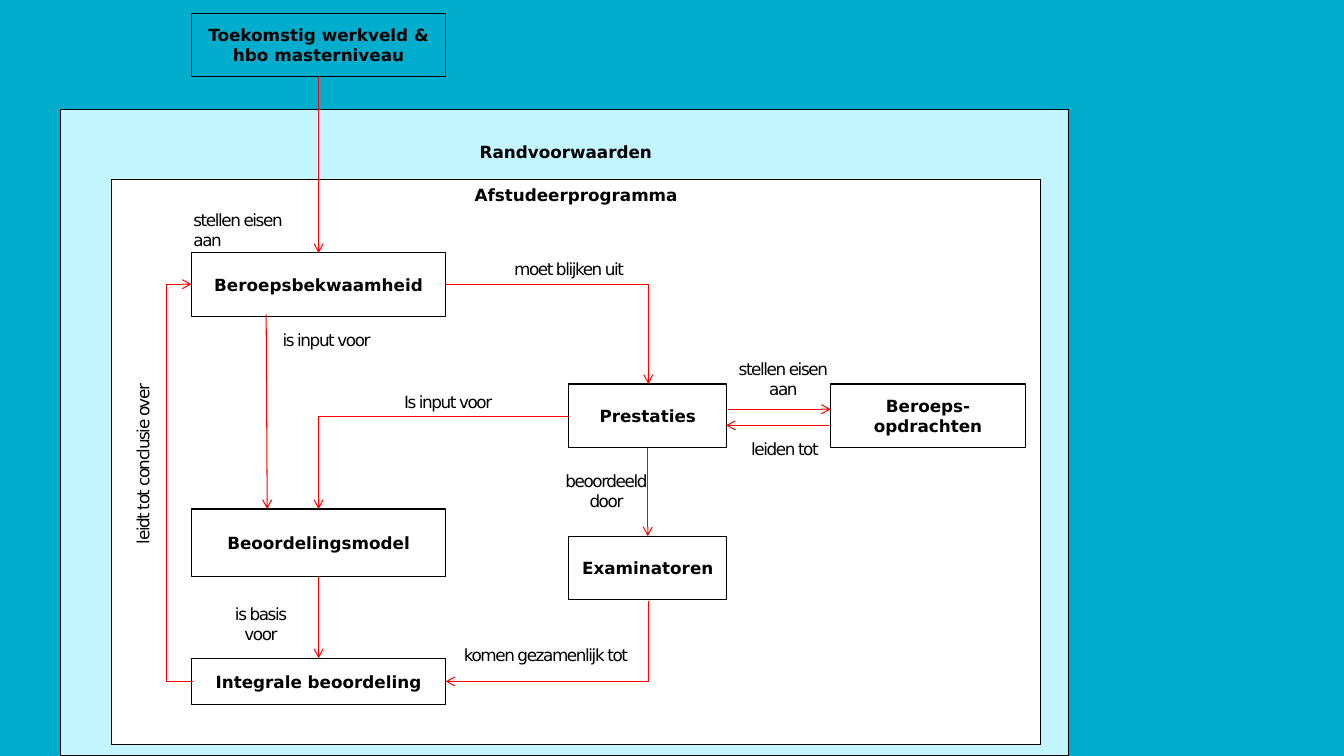
from dataclasses import dataclass

from lxml import etree
from pptx import Presentation
from pptx import util as u
from pptx.dml.color import RGBColor
from pptx.enum import shapes, text
from pptx.oxml.ns import qn

COLOURS = {"page": "00ADCD", "frame": "C2F5FF", "programme": "FFFFFF",
           "ink": "000000", "arrow": "FF0000"}
FONT = {"name": "DejaVu Sans", "size": u.Pt(12)}
LEFT, CENTER = text.PP_ALIGN.LEFT, text.PP_ALIGN.CENTER
TOP, MIDDLE = text.MSO_ANCHOR.TOP, text.MSO_ANCHOR.MIDDLE
BOTTOM_SIDE, TOP_SIDE = 2, 0


@dataclass
class Box:
    caption: str
    left: float
    top: float
    width: float
    height: float
    fill: str = ""
    anchor: text.MSO_ANCHOR = MIDDLE


@dataclass
class Label:
    lines: str
    left: float
    top: float
    width: float
    height: float = 0.3
    align: text.PP_ALIGN = CENTER
    wrap: bool = False
    rotation: int = 0
    bold: bool = False
    line_spacing: float = 1.0


@dataclass
class Arrow:
    start: tuple[float, float]
    end: tuple[float, float]
    bend: str = ""  # "across" first, "down" first, or "loop" on the left


COLUMN, COLUMN_WIDTH = 1.9, 2.52
RESULTS, RESULTS_WIDTH = 5.64, 1.57
ROW_HEIGHT = 0.63

BOXES = [
    Box("", 0.6, 1.09, 10, 6.41, "frame"),
    Box("Afstudeerprogramma", 1.11, 1.78, 9.21, 5.61, "programme", TOP),
    Box("Toekomstig werkveld & hbo masterniveau", COLUMN, 0.13, COLUMN_WIDTH, ROW_HEIGHT),
    Box("Beroepsbekwaamheid", COLUMN, 2.51, COLUMN_WIDTH, ROW_HEIGHT),
    Box("Beoordelingsmodel", COLUMN, 5.05, COLUMN_WIDTH, 0.67),
    Box("Integrale beoordeling", COLUMN, 6.53, COLUMN_WIDTH, 0.46),
    Box("Prestaties", RESULTS, 3.81, RESULTS_WIDTH, ROW_HEIGHT),
    Box("Examinatoren", RESULTS, 5.32, RESULTS_WIDTH, ROW_HEIGHT),
    Box("Beroeps-opdrachten", 8.24, 3.81, 1.93, ROW_HEIGHT),
]

JOINS = [
    ("Toekomstig werkveld & hbo masterniveau", "Beroepsbekwaamheid"),
    ("Beoordelingsmodel", "Integrale beoordeling"),
    ("Prestaties", "Examinatoren"),
]

ARROWS = [
    Arrow((2.64, 3.12), (2.65, 5.05)),
    Arrow((7.22, 4.06), (8.24, 4.06)),
    Arrow((8.22, 4.22), (7.2, 4.22)),
    Arrow((4.42, 2.82), (6.43, 3.81), "across"),
    Arrow((5.64, 4.13), (3.16, 5.05), "across"),
    Arrow((6.43, 5.96), (4.42, 6.76), "down"),
    Arrow((1.91, 6.76), (1.9, 2.82), "loop"),
]
LOOP_REACH = 0.26

LABELS = [
    Label("Randvoorwaarden", 4.66, 1.26, 6.4, 0.36, LEFT, True, bold=True, line_spacing=1.5),
    Label("stellen eisen aan", 1.82, 2.03, 1.3, 0.5, LEFT, True),
    Label("moet blijken uit", 5, 2.52, 1.31, align=LEFT),
    Label("is input voor", 2.7, 3.22, 1.08),
    Label("Is input voor", 3.45, 3.84, 1.99, wrap=True),
    Label("stellen eisen\naan", 7.21, 3.51, 1.12, 0.5),
    Label("leiden tot", 7.18, 4.3, 1.21, wrap=True),
    Label("beoordeeld\ndoor", 5.49, 4.62, 1.05, 0.5),
    Label("is basis\nvoor", 2.21, 5.94, 0.76, 0.5),
    Label("komen gezamenlijk tot", 4.5, 6.35, 1.83, wrap=True),
    Label("leidt tot conclusie over", 0.5, 4.43, 1.83, align=LEFT, rotation=270),
]


def colour(name: str) -> RGBColor:
    return RGBColor.from_string(COLOURS[name])


def write(frame, lines: str, align, bold: bool, line_spacing: float = 1.0) -> None:
    for index, line in enumerate(lines.split("\n")):
        para = frame.paragraphs[0] if index == 0 else frame.add_paragraph()
        para.alignment, para.line_spacing = align, line_spacing
        span = para.add_run()
        span.text = line
        for key, value in {**FONT, "bold": bold}.items():
            setattr(span.font, key, value)
        span.font.color.rgb = colour("ink")
        if not bold:
            span.font._element.set("spc", "-100")


def draw_box(page, box: Box):
    shape = page.shapes.add_shape(
        shapes.MSO_SHAPE.RECTANGLE,
        *map(u.Inches, (box.left, box.top, box.width, box.height)))
    shape.shadow.inherit = False
    if box.fill:
        shape.fill.solid()
        shape.fill.fore_color.rgb = colour(box.fill)
    else:
        shape.fill.background()
    shape.line.color.rgb = colour("ink")
    shape.line.width = u.Pt(0.75)
    shape.text_frame.vertical_anchor = box.anchor
    if box.caption:
        write(shape.text_frame, box.caption, CENTER, True)
    return shape


def draw_label(page, label: Label) -> None:
    shape = page.shapes.add_textbox(
        *map(u.Inches, (label.left, label.top, label.width, label.height)))
    shape.rotation = label.rotation
    shape.text_frame.word_wrap = label.wrap
    write(shape.text_frame, label.lines, label.align, label.bold, label.line_spacing)


def bend_connector(line, arrow: Arrow) -> None:
    """Give an elbow its route: one corner, or a loop out to the left."""
    geometry = line._element.spPr.find(qn("a:prstGeom"))
    if arrow.bend == "loop":
        guides = geometry.find(qn("a:avLst"))
        reach = round(LOOP_REACH / abs(arrow.start[0] - arrow.end[0]) * 100000)
        etree.SubElement(guides, qn("a:gd"), name="adj1", fmla=f"val {reach}")
        return
    geometry.set("prst", "bentConnector2")
    if arrow.bend == "down":
        middle_x, middle_y = line.left + line.width // 2, line.top + line.height // 2
        line.width, line.height = line.height, line.width
        line.left, line.top = middle_x - line.width // 2, middle_y - line.height // 2
        frame = line._element.spPr.find(qn("a:xfrm"))
        frame.attrib.pop("flipH", None)
        frame.set("rot", str(90 * 60000))


def draw_arrow(page, arrow: Arrow):
    kind = shapes.MSO_CONNECTOR.ELBOW if arrow.bend else shapes.MSO_CONNECTOR.STRAIGHT
    line = page.shapes.add_connector(kind, *map(u.Inches, arrow.start + arrow.end))
    line.line.color.rgb = colour("arrow")
    line.line.width = u.Pt(0.75)
    etree.SubElement(line.line._get_or_add_ln(), qn("a:tailEnd"), type="arrow")
    etree.SubElement(line._element.spPr, qn("a:effectLst"))
    if arrow.bend:
        bend_connector(line, arrow)
    return line


def main() -> None:
    deck = Presentation()
    deck.slide_width, deck.slide_height = u.Inches(13.33), u.Inches(7.5)
    page = deck.slides.add_slide(deck.slide_layouts[6])
    page.background.fill.solid()
    page.background.fill.fore_color.rgb = colour("page")

    drawn = {box.caption: draw_box(page, box) for box in BOXES}
    for upper, lower in JOINS:
        line = draw_arrow(page, Arrow((0, 0), (0, 0)))
        line.begin_connect(drawn[upper], BOTTOM_SIDE)
        line.end_connect(drawn[lower], TOP_SIDE)
    for arrow in ARROWS:
        draw_arrow(page, arrow)
    for label in LABELS:
        draw_label(page, label)
    deck.save("out.pptx")


if __name__ == "__main__":
    main()
